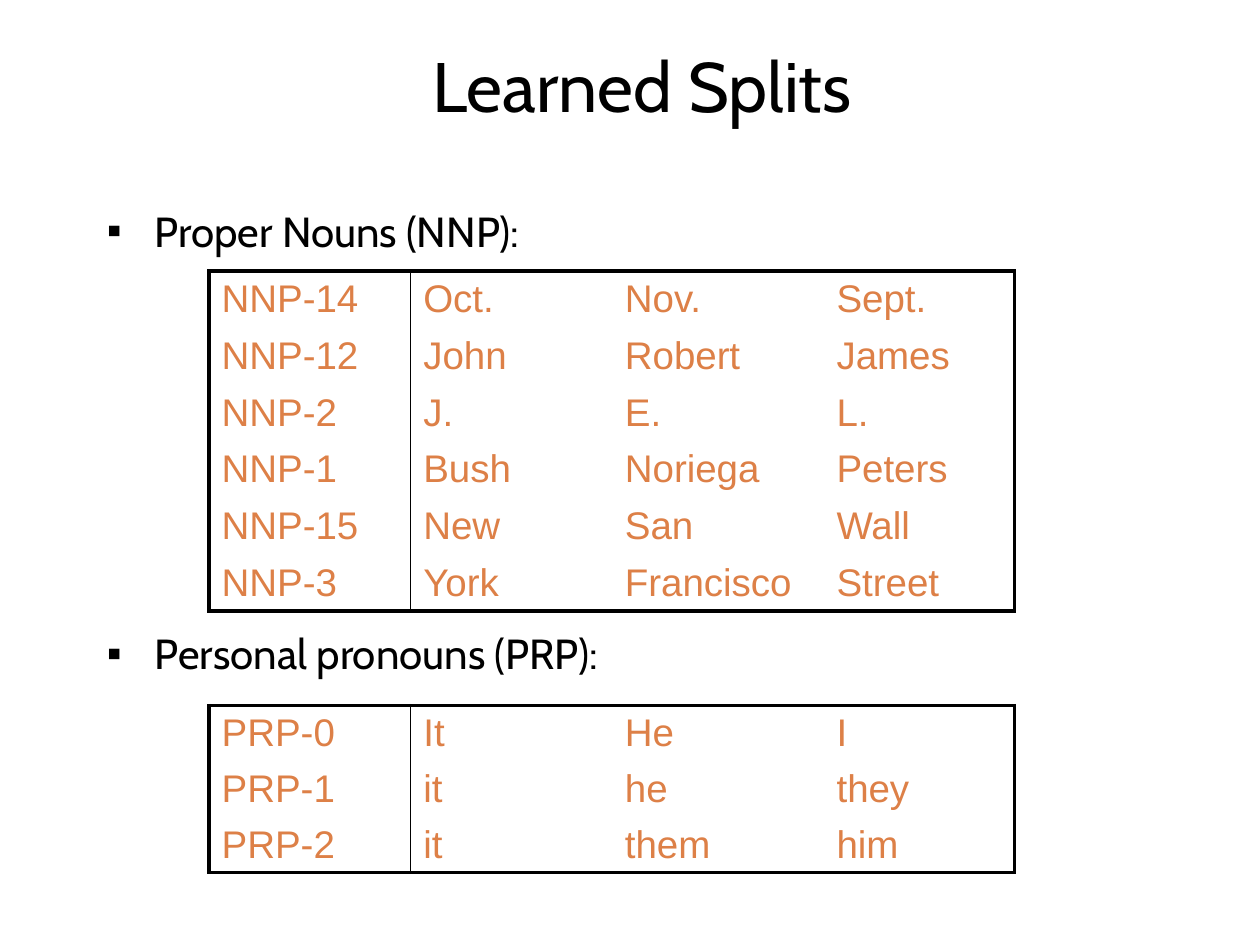
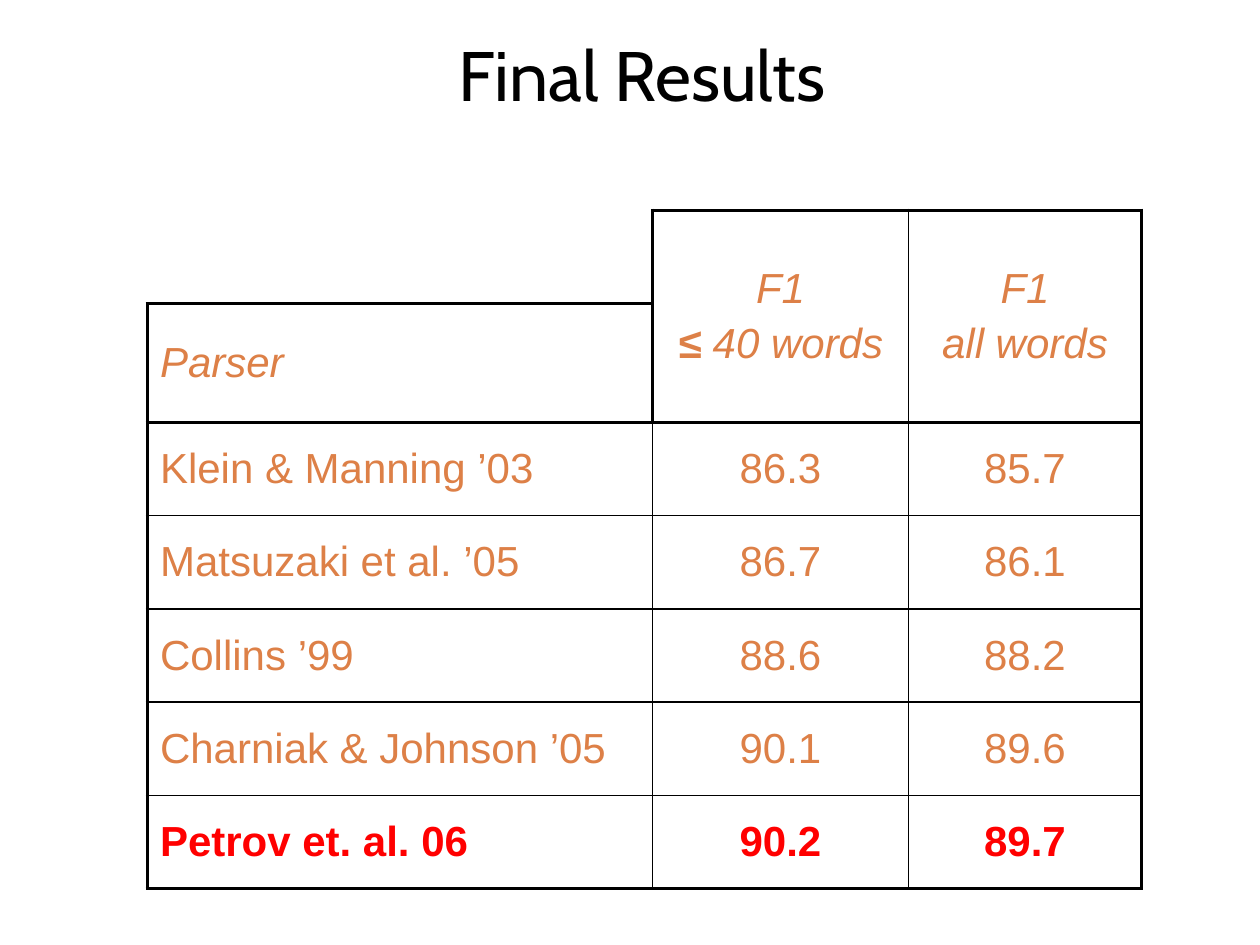
"""Build two slides on learned grammar splits and final parser results."""
import pptx
import pptx.dml.color
import pptx.enum.text
import pptx.oxml
import pptx.oxml.ns
import pptx.util
from lxml import etree

COLORS = {"ink": "000000", "paper": "FFFFFF", "entry": "DD8047", "winner": "FF0000"}
HEADING_FONT, TABLE_FONT = "Cabin", "Arial"
SLIDE_WIDTH, SLIDE_HEIGHT = pptx.util.Inches(10), pptx.util.Inches(7.5)
HEAVY, THIN = 2.25, 1
LEFT, CENTER = pptx.enum.text.PP_ALIGN.LEFT, pptx.enum.text.PP_ALIGN.CENTER
MIDDLE = pptx.enum.text.MSO_ANCHOR.MIDDLE

SPLIT_COLUMNS = (16, 16, 16.8, 15.1)
PROPER_NOUNS = (
    ("NNP-14", "Oct.", "Nov.", "Sept."),
    ("NNP-12", "John", "Robert", "James"),
    ("NNP-2", "J.", "E.", "L."),
    ("NNP-1", "Bush", "Noriega", "Peters"),
    ("NNP-15", "New", "San", "Wall"),
    ("NNP-3", "York", "Francisco", "Street"),
)
PRONOUNS = (
    ("PRP-0", "It", "He", "I"),
    ("PRP-1", "it", "he", "they"),
    ("PRP-2", "it", "them", "him"),
)
RESULTS = (
    ("", "F1\n≤ ", "F1\nall words"),
    ("Parser", "", ""),
    ("Klein & Manning ’03", "86.3", "85.7"),
    ("Matsuzaki et al. ’05", "86.7", "86.1"),
    ("Collins ’99", "88.6", "88.2"),
    ("Charniak & Johnson ’05", "90.1", "89.6"),
    ("Petrov et. al. 06", "90.2", "89.7"),
)


def across(percent):
    """Return a share of the slide's width."""
    return int(SLIDE_WIDTH * percent / 100)


def down(percent):
    """Return a share of the slide's height."""
    return int(SLIDE_HEIGHT * percent / 100)


def style_text(paragraph, font, size, color, bold=False, italic=False):
    """Format every run of a paragraph."""
    for run in paragraph.runs:
        run.font.name = font
        run.font.size = pptx.util.Pt(size)
        run.font.color.rgb = pptx.dml.color.RGBColor.from_string(COLORS[color])
        run.font.bold, run.font.italic = bold, italic


def add_line_of_text(slide, text, left, top, width, height, size):
    """Add a one-paragraph heading and return its text frame."""
    box = slide.shapes.add_textbox(across(left), down(top), across(width), down(height))
    frame = box.text_frame
    frame.word_wrap = True
    frame.text = text
    style_text(frame.paragraphs[0], HEADING_FONT, size, "ink")
    return frame


def add_titled_slide(deck, title, top):
    """Add a blank slide with a white ground and a centred title."""
    slide = deck.slides.add_slide(deck.slide_layouts[6])
    ground = slide.background.fill
    ground.solid()
    ground.fore_color.rgb = pptx.dml.color.RGBColor.from_string(COLORS["paper"])
    frame = add_line_of_text(slide, title, 11.7, top, 78.5, 13.33, 40)
    frame.vertical_anchor = MIDDLE
    frame.paragraphs[0].alignment = CENTER
    return slide


def add_bullet(slide, text, top):
    """Add a square-bulleted heading."""
    frame = add_line_of_text(slide, text, 7.5, top, 87.3, 7, 24)
    properties = frame.paragraphs[0]._p.get_or_add_pPr()
    indent = across(3.8)
    properties.set("marL", str(indent))
    properties.set("indent", str(-indent))
    for tag, key, value in (("a:buFont", "typeface", TABLE_FONT), ("a:buChar", "char", "▪")):
        etree.SubElement(properties, pptx.oxml.ns.qn(tag)).set(key, value)


def set_borders(cell, widths):
    """Draw the left, right, top and bottom borders; zero means none."""
    properties = cell._tc.get_or_add_tcPr()
    for place, (side, width) in enumerate(zip("LRTB", widths)):
        paint = f'<a:solidFill><a:srgbClr val="{COLORS["ink"]}"/></a:solidFill>'
        line = pptx.oxml.parse_xml(
            f'<a:ln{side} {pptx.oxml.ns.nsdecls("a")} w="{pptx.util.Pt(width)}">'
            f'{paint if width else "<a:noFill/>"}</a:ln{side}>')
        properties.insert(place, line)


def add_grid(slide, left, top, columns, heights, entries, size, upright, level, align, look):
    """Add a table whose borders, alignment and text look follow given rules."""
    table = slide.shapes.add_table(
        len(heights), len(columns), across(left), down(top),
        across(sum(columns)), down(sum(heights))).table
    table.first_row = table.horz_banding = False
    for column, width in zip(table.columns, columns):
        column.width = across(width)
    for r, (height, texts) in enumerate(zip(heights, entries)):
        table.rows[r].height = down(height)
        for c, text in enumerate(texts):
            cell = table.cell(r, c)
            cell.fill.background()
            cell.vertical_anchor = MIDDLE
            cell.margin_top = cell.margin_bottom = down(0.5)
            set_borders(cell, (upright(r, c), upright(r, c + 1), level(r, c), level(r + 1, c)))
            cell.text_frame.text = text
            for number, paragraph in enumerate(cell.text_frame.paragraphs):
                paragraph.alignment = align(c)
                paragraph.space_before = pptx.util.Pt(size * 0.2 if number else 0)
                style_text(paragraph, TABLE_FONT, size, **look(r))
    return table


def add_splits(slide, top, row_height, entries):
    """Add a framed table of split labels and their words."""
    last = len(entries)
    add_grid(
        slide, 16.6, top, SPLIT_COLUMNS, [row_height] * last, entries, 22,
        upright=lambda r, edge: {0: HEAVY, 1: THIN, len(SPLIT_COLUMNS): HEAVY}.get(edge, 0),
        level=lambda edge, c: HEAVY if edge in (0, last) else 0,
        align=lambda c: LEFT,
        look=lambda r: {"color": "entry"})


def result_upright(r, edge):
    """Return the width of a vertical rule in the results."""
    if edge == 0 and r == 0:
        return 0
    return HEAVY if edge in (0, 3) or (edge == 1 and r == 0) else THIN


def result_level(edge, c):
    """Return the width of a horizontal rule in the results."""
    if edge == 0 and c == 0:
        return 0
    return HEAVY if edge in (0, 1, 2, len(RESULTS)) else THIN


def result_look(r):
    """Return the text look of a results row."""
    if r == len(RESULTS) - 1:
        return {"color": "winner", "bold": True}
    return {"color": "entry", "italic": r < 2}


def add_results(slide):
    """Add the score table with its two tall column headings."""
    heights = [9.87, 12.1] + [9.87] * 5
    scores = add_grid(
        slide, 11.7, 22.27, (40.1, 20.3, 18.5), heights, RESULTS, 24,
        result_upright, result_level, lambda c: CENTER if c else LEFT, result_look)
    for c in (1, 2):
        scores.cell(0, c).merge(scores.cell(1, c))
    limit = scores.cell(0, 1).text_frame.paragraphs[1]
    limit.add_run().text = "40 words"
    style_text(limit, TABLE_FONT, 24, **result_look(0))
    limit.runs[0].font.bold = True
    limit.runs[0].font.italic = True


def main():
    """Build and save the deck."""
    deck = pptx.Presentation()
    deck.slide_width, deck.slide_height = SLIDE_WIDTH, SLIDE_HEIGHT
    splits = add_titled_slide(deck, "Learned Splits", 2.27)
    add_bullet(splits, "Proper Nouns (NNP):", 21.07)
    add_splits(splits, 28.67, 6, PROPER_NOUNS)
    add_bullet(splits, "Personal pronouns (PRP):", 65.73)
    add_splits(splits, 74.67, 5.9, PRONOUNS)
    add_results(add_titled_slide(deck, "Final Results", 1.07))
    deck.save("out.pptx")


if __name__ == "__main__":
    main()
